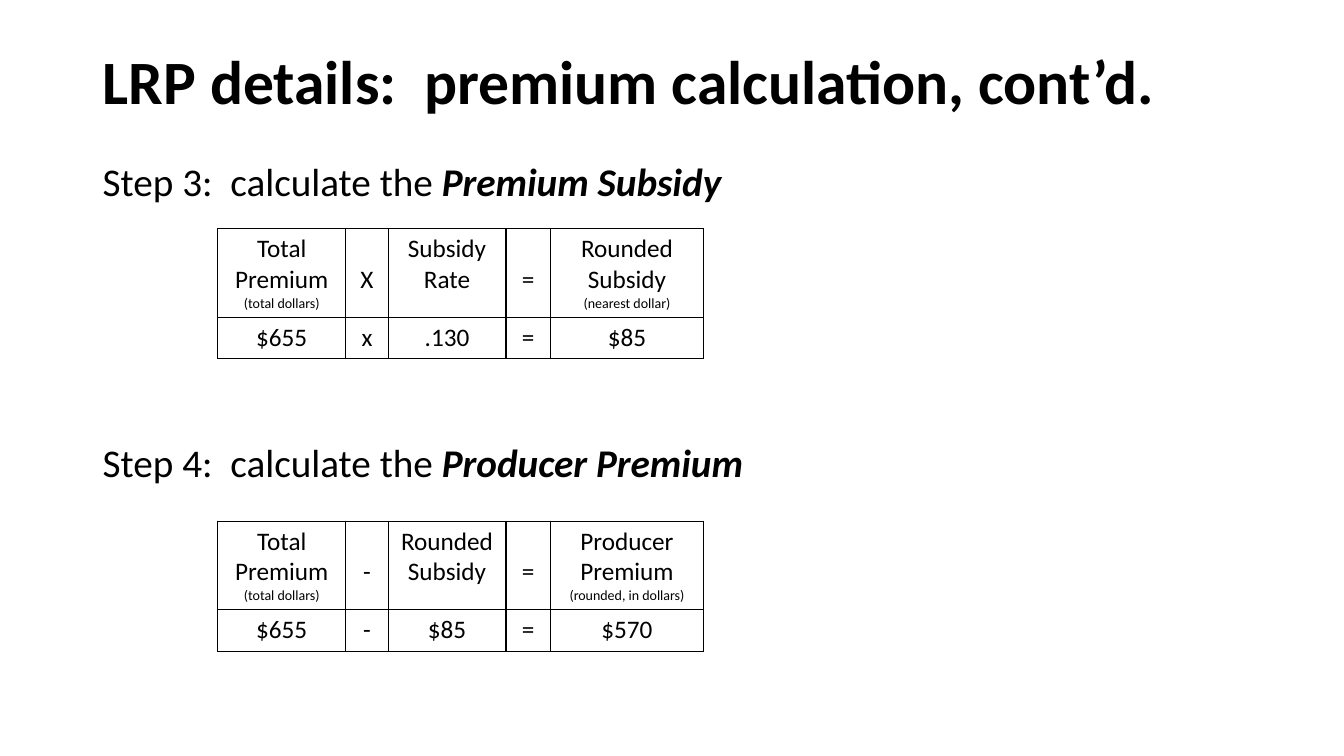
import pptx
import pptx.dml.color
import pptx.enum.text
import pptx.oxml
import pptx.oxml.ns
import pptx.util

BLACK = pptx.dml.color.RGBColor(0x00, 0x00, 0x00)
FONT = "Calibri"
WIDTH, HEIGHT = pptx.util.Inches(13.33), pptx.util.Inches(7.5)

# Shares of the slide's width and height
TEXT_LEFT, TEXT_WIDTH = 0.92 / 13.33, 11.5 / 13.33
TABLE_LEFT = 2.16 / 13.33
COLUMNS = [share / 13.33 for share in (1.27, 0.42, 1.17, 0.44, 1.52)]
ROWS = [0.88 / 7.5, 0.41 / 7.5]
OPERATOR_COLUMNS = (1, 3)
OPERATOR_DROP = pptx.util.Inches(0.35)

SUBSIDY = [
    ["Total Premium\n(total dollars)", "X", "Subsidy\nRate", "=",
     "Rounded Subsidy\n(nearest dollar)"],
    ["$655", "x", ".130", "=", "$85"],
]
PRODUCER = [
    ["Total Premium\n(total dollars)", "-", "Rounded Subsidy", "=",
     "Producer Premium\n(rounded, in dollars)"],
    ["$655", "-", "$85", "=", "$570"],
]


def across(share):
    return round(WIDTH * share)


def down(share):
    return round(HEIGHT * share)


def apply(target, formats):
    for name, value in formats.items():
        setattr(target, name, value)


def add_run(paragraph, text, size, **formats):
    run = paragraph.add_run()
    run.text = text
    apply(run.font, {"name": FONT, "size": pptx.util.Pt(size), **formats})
    run.font.color.rgb = BLACK


def add_text_area(slide, top, height, anchor):
    area = slide.shapes.add_textbox(
        across(TEXT_LEFT), down(top), across(TEXT_WIDTH), down(height))
    apply(area.text_frame, {"word_wrap": True, "vertical_anchor": anchor})
    return area.text_frame


def add_title(slide, text):
    heading = add_text_area(slide, 0.11 / 7.5, 1.45 / 7.5,
                            pptx.enum.text.MSO_ANCHOR.MIDDLE).paragraphs[0]
    heading.line_spacing = 0.9
    add_run(heading, text, 44, bold=True)


def add_steps(slide, results):
    body = add_text_area(slide, 1.56 / 7.5, 5.86 / 7.5,
                         pptx.enum.text.MSO_ANCHOR.TOP)
    for index, result in enumerate(results):
        step = body.add_paragraph() if index else body.paragraphs[0]
        # The gap between steps leaves room for a table
        gap = pptx.util.Pt(171 if index else 10)
        apply(step, {"line_spacing": 0.9, "space_before": gap})
        add_run(step, f"Step {index + 3}:  calculate the ", 28)
        add_run(step, result, 28, bold=True, italic=True)


def add_borders(cell):
    properties = cell._tc.get_or_add_tcPr()
    for position, side in enumerate(("lnL", "lnR", "lnT", "lnB")):
        properties.insert(position, pptx.oxml.parse_xml(
            f'<a:{side} {pptx.oxml.ns.nsdecls("a")} w="12700">'
            f'<a:solidFill><a:srgbClr val="{BLACK}"/></a:solidFill></a:{side}>'))


def fill_cell(cell, text):
    cell.fill.background()
    add_borders(cell)
    for index, line in enumerate(text.split("\n")):
        frame = cell.text_frame
        paragraph = frame.add_paragraph() if index else frame.paragraphs[0]
        paragraph.alignment = pptx.enum.text.PP_ALIGN.CENTER
        add_run(paragraph, line, 10 if line.startswith("(") else 18)


def add_formula(slide, top, formula):
    table = slide.shapes.add_table(
        len(ROWS), len(COLUMNS), across(TABLE_LEFT), down(top),
        across(sum(COLUMNS)), down(sum(ROWS))).table
    apply(table, {"first_row": False, "horz_banding": False})
    for column, share in zip(table.columns, COLUMNS):
        column.width = across(share)
    for row, share in zip(table.rows, ROWS):
        row.height = down(share)
    for row, texts in zip(table.rows, formula):
        for cell, text in zip(row.cells, texts):
            fill_cell(cell, text)
    # Header operators sit on the second line of their neighbours
    for column in OPERATOR_COLUMNS:
        table.cell(0, column).margin_top = OPERATOR_DROP


def main():
    deck = pptx.Presentation()
    apply(deck, {"slide_width": WIDTH, "slide_height": HEIGHT})
    slide = deck.slides.add_slide(deck.slide_layouts[6])

    # Title and step headings
    add_title(slide, "LRP details:  premium calculation, cont’d.")
    add_steps(slide, ["Premium Subsidy", "Producer Premium"])

    # One formula table under each step
    add_formula(slide, 5.17 / 7.5, PRODUCER)
    add_formula(slide, 2.27 / 7.5, SUBSIDY)

    deck.save("out.pptx")


if __name__ == "__main__":
    main()
